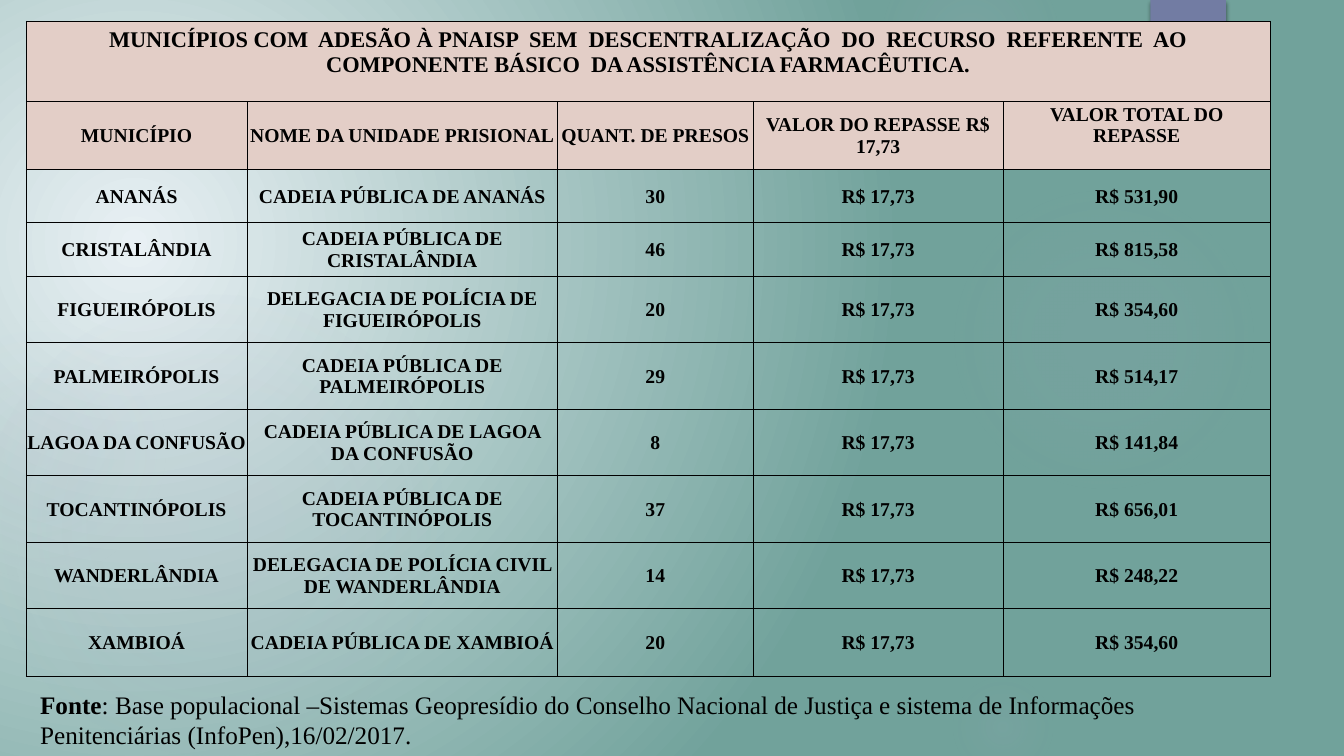
from lxml import etree
from pptx import Presentation, util as u
from pptx.dml.color import RGBColor
from pptx.enum import shapes, text
from pptx.oxml.ns import qn

COLORS = {"light": "E8F0F4", "teal": "71A29B", "mist": "AAB0C8", "pale": "EBF2F4",
          "tab": "727CA3", "header": "E3CEC7", "ink": "000000"}
FONT = "Times New Roman"


def paint_radial(owner, stops, focus):
    gradient = owner.element.find(".//" + qn("a:gradFill"))
    for child in list(gradient):
        gradient.remove(child)
    stop_list = etree.SubElement(gradient, qn("a:gsLst"))
    for position, color, opacity in stops:
        stop = etree.SubElement(stop_list, qn("a:gs"), pos=str(position * 1000))
        tint = etree.SubElement(stop, qn("a:srgbClr"), val=COLORS[color])
        if opacity < 100:
            etree.SubElement(tint, qn("a:alpha"), val=str(opacity * 1000))
    circle = etree.SubElement(gradient, qn("a:path"), path="circle")
    sides = {side: str(value * 1000) for side, value in zip("ltrb", focus)}
    etree.SubElement(circle, qn("a:fillToRect"), **sides)


def add_span(para, wording, size, bold):
    span = para.add_run()
    span.text = wording
    span.font.name = FONT
    span.font.size = u.Pt(size)
    span.font.bold = bold
    span.font.color.rgb = RGBColor.from_string(COLORS["ink"])


deck = Presentation()
deck.slide_width = u.Inches(13.33)
deck.slide_height = u.Inches(7.5)
page = deck.slides.add_slide(deck.slide_layouts[6])
page.background.fill.gradient()
paint_radial(page, [(0, "light", 100), (100, "teal", 100)], (45, 65, 125, 100))

glows = [
    (-0.17, 2.92, 4.58, [(0, "mist", 11), (36, "mist", 10), (75, "mist", 0)]),
    (-0.92, 3.17, 2.58, [(0, "mist", 8), (36, "mist", 5), (71, "pale", 0)]),
    (9.41, 1.83, 3.08, [(0, "mist", 7), (36, "mist", 6), (69, "mist", 0)]),
    (8.75, -0.5, 1.75, [(0, "mist", 14), (36, "mist", 7), (73, "mist", 0)]),
    (9.41, 6.67, 1.08, [(0, "mist", 10), (31, "mist", 5), (66, "mist", 0)]),
]
for left, top, size, stops in glows:
    glow = page.shapes.add_shape(shapes.MSO_SHAPE.OVAL, u.Inches(left), u.Inches(top),
                                 u.Inches(size), u.Inches(size))
    glow.shadow.inherit = False
    glow.line.fill.background()
    glow.fill.gradient()
    paint_radial(glow, stops, (50, 50, 50, 50))

tab = page.shapes.add_shape(shapes.MSO_SHAPE.RECTANGLE, u.Inches(11.41), u.Inches(0),
                            u.Inches(0.75), u.Inches(1.25))
tab.fill.solid()
tab.fill.fore_color.rgb = RGBColor.from_string(COLORS["tab"])
tab.line.fill.background()
tab.shadow.inherit = False
shadow = etree.SubElement(tab.element.find(".//" + qn("a:effectLst")), qn("a:outerShdw"),
                          blurRad=str(u.Pt(3)), dist=str(u.Pt(2)), dir="5400000")
shade = etree.SubElement(shadow, qn("a:srgbClr"), val=COLORS["ink"])
etree.SubElement(shade, qn("a:alpha"), val="45000")

title = ["MUNICÍPIOS COM  ADESÃO À PNAISP  SEM  DESCENTRALIZAÇÃO  DO  RECURSO  REFERENTE  AO",
         "COMPONENTE BÁSICO  DA ASSISTÊNCIA FARMACÊUTICA."]
headings = ["MUNICÍPIO", "NOME DA UNIDADE PRISIONAL", "QUANT. DE PRESOS",
            "VALOR DO REPASSE R$ 17,73", "VALOR TOTAL DO REPASSE"]
prisons = [
    ("ANANÁS", "CADEIA PÚBLICA DE ANANÁS", "30", "R$ 531,90"),
    ("CRISTALÂNDIA", "CADEIA PÚBLICA DE CRISTALÂNDIA", "46", "R$ 815,58"),
    ("FIGUEIRÓPOLIS", "DELEGACIA DE POLÍCIA DE FIGUEIRÓPOLIS", "20", "R$ 354,60"),
    ("PALMEIRÓPOLIS", "CADEIA PÚBLICA DE PALMEIRÓPOLIS", "29", "R$ 514,17"),
    ("LAGOA DA CONFUSÃO", "CADEIA PÚBLICA DE LAGOA DA CONFUSÃO", "8", "R$ 141,84"),
    ("TOCANTINÓPOLIS", "CADEIA PÚBLICA DE TOCANTINÓPOLIS", "37", "R$ 656,01"),
    ("WANDERLÂNDIA", "DELEGACIA DE POLÍCIA CIVIL DE WANDERLÂNDIA", "14", "R$ 248,22"),
    ("XAMBIOÁ", "CADEIA PÚBLICA DE XAMBIOÁ", "20", "R$ 354,60"),
]
rows = [[title, [], [], [], []], [[heading] for heading in headings]]
for town, prison, inmates, total in prisons:
    rows.append([[town], [prison], [inmates], ["R$ 17,73"], [total]])

widths = [2.19, 3.08, 1.94, 2.48, 2.65]
heights = [0.8, 0.67, 0.53, 0.53] + [0.66] * 5 + [0.67]
table = page.shapes.add_table(len(rows), len(widths), u.Inches(0.26), u.Inches(0.21),
                              u.Inches(sum(widths)), u.Inches(sum(heights))).table
table.first_row = False
table.horz_banding = False
for column, width in zip(table.columns, widths):
    column.width = u.Inches(width)
for row, height in zip(table.rows, heights):
    row.height = u.Inches(height)
table.cell(0, 0).merge(table.cell(0, 4))

for row_index, row in enumerate(rows):
    for column_index, lines in enumerate(row):
        cell = table.cell(row_index, column_index)
        cell.margin_left = cell.margin_right = cell.margin_top = u.Inches(0.01)
        cell.margin_bottom = 0
        cell.vertical_anchor = text.MSO_ANCHOR.MIDDLE
        for side in "LRTB":
            border = etree.SubElement(cell._tc.get_or_add_tcPr(), qn("a:ln" + side),
                                      w=str(u.Pt(0.5)))
            ink = etree.SubElement(border, qn("a:solidFill"))
            etree.SubElement(ink, qn("a:srgbClr"), val=COLORS["ink"])
        if row_index < 2:
            cell.fill.solid()
            cell.fill.fore_color.rgb = RGBColor.from_string(COLORS["header"])
        else:
            cell.fill.background()
        for line_index, line in enumerate(lines):
            frame = cell.text_frame
            para = frame.add_paragraph() if line_index else frame.paragraphs[0]
            para.alignment = text.PP_ALIGN.CENTER
            add_span(para, line, 14 if row_index else 16, True)

table.cell(0, 0).vertical_anchor = text.MSO_ANCHOR.BOTTOM
table.cell(0, 0).margin_bottom = u.Inches(0.24)
table.cell(1, 4).margin_bottom = u.Inches(0.21)

box = page.shapes.add_textbox(u.Inches(0.3), u.Inches(6.79), u.Inches(11.57), u.Inches(0.71))
box.text_frame.word_wrap = True
box.text_frame.auto_size = text.MSO_AUTO_SIZE.SHAPE_TO_FIT_TEXT
source = box.text_frame.paragraphs[0]
add_span(source, "Fonte", 18, True)
add_span(source, ": Base populacional –Sistemas Geopresídio do Conselho Nacional de Justiça e sistema "
                 "de Informações Penitenciárias (InfoPen),16/02/2017.", 18, False)

deck.save("out.pptx")
